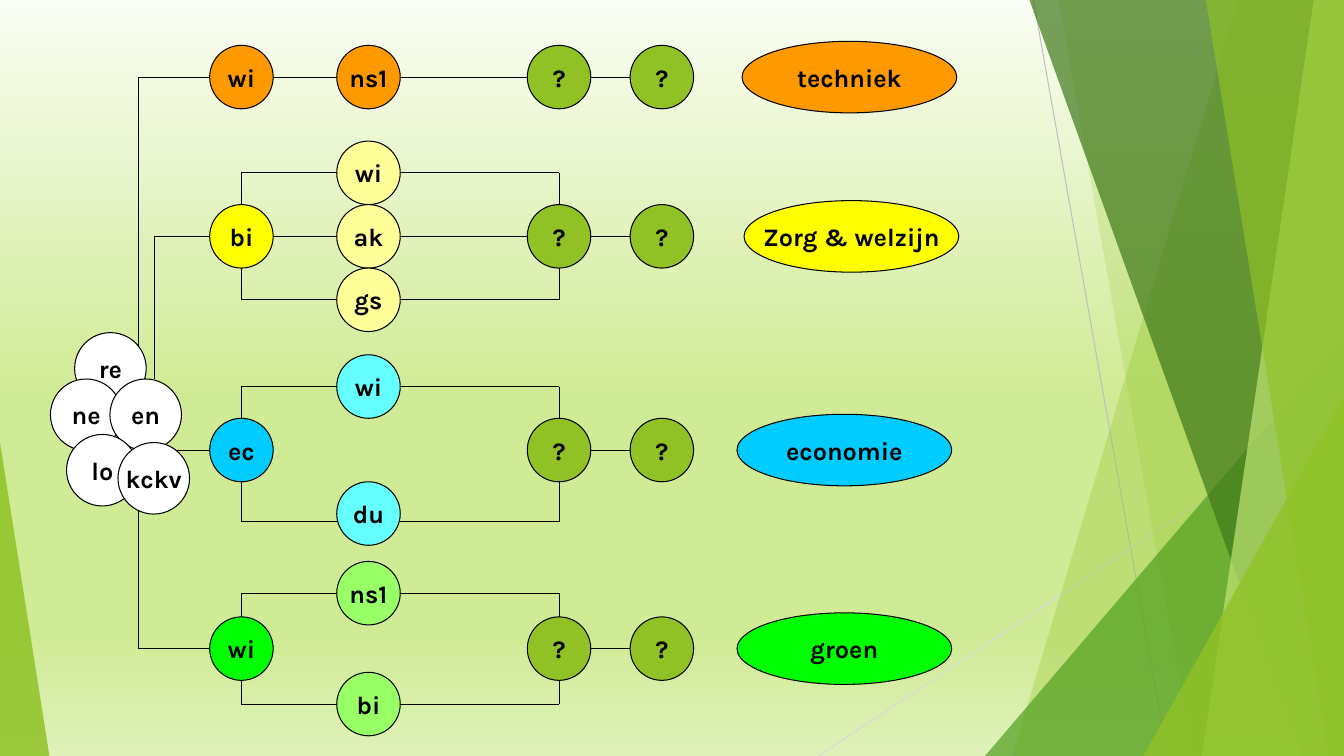
"""Build a slide that maps school subjects to four career sectors."""
from dataclasses import dataclass

import lxml.etree
import pptx
import pptx.dml.color
import pptx.enum.shapes
import pptx.enum.text
import pptx.oxml.ns
import pptx.util
from pptx.util import Inches

WIDTH, HEIGHT = 13.33, 7.5
NODE, CORE, SECTOR_WIDTH = 0.63, 0.71, 2.13
START_X, MIDDLE_X, CHOICE_X, LAST_X = 2.08, 3.34, 5.23, 6.25
LEAF, BLACK, WHITE = "90C226", "000000", "FFFFFF"
BACKGROUND = [(0, "FAFDF3"), (52, "D0EB96"), (84, "D0EB96"), (100, "DFF1B9")]
ELLIPSE = pptx.enum.shapes.MSO_SHAPE.OVAL
TRIANGLE = pptx.enum.shapes.MSO_SHAPE.ISOSCELES_TRIANGLE


@dataclass
class Shard:
    """A band from a slanted left edge to the right side of the slide."""
    top_x: float
    bottom_x: float
    colour: str
    opacity: int


@dataclass
class Wedge:
    """A right-angled triangle standing on the bottom of the slide."""
    left: float
    top: float
    width: float
    apex: float
    colour: str
    opacity: int


@dataclass
class Middle:
    """A subject in the middle column, its line shifted down by drop."""
    label: str
    top: float
    drop: float = 0


@dataclass
class Track:
    """A route from the shared core to one sector."""
    top: float
    start: str
    colour: str
    middles: list[Middle]
    middle_colour: str
    sector: str
    sector_x: float
    trunk_x: float
    trunk_y: float


SCENERY = [
    Shard(12.28, 10.04, LEAF, 30),
    Shard(10.5, 11.83, LEAF, 20),
    Wedge(9.77, 3.33, 3.56, 1, "54A021", 72),
    Shard(10.21, 12.91, "3F7819", 70),
    Shard(13.03, 11.92, "C0E474", 70),
    Shard(11.96, 13.18, LEAF, 65),
    Wedge(11.34, 3.93, 1.99, 1, LEAF, 80),
    Wedge(0, 4.39, 0.49, 0, LEAF, 85),
]
TRACKS = [
    Track(0.45, "wi", "FF9900", [Middle("ns1", 0.45)], "FF9900",
          "techniek", 7.36, 1.37, 3.76),
    Track(2.03, "bi", "FFFF00",
          [Middle("wi", 1.4), Middle("ak", 2.03), Middle("gs", 2.66)], "FFFF99",
          "Zorg & welzijn", 7.38, 1.53, 3.76),
    Track(4.15, "ec", "00CCFF", [Middle("wi", 3.52), Middle("du", 4.78, 0.08)],
          "66FFFF", "economie", 7.31, 1.53, 4.47),
    Track(6.12, "wi", "00FF00", [Middle("ns1", 5.57), Middle("bi", 6.67)],
          "99FF66", "groen", 7.31, 1.37, 4.47),
]
CORE_SUBJECTS = [("re", 0.74, 3.3), ("ne", 0.5, 3.76), ("en", 1.09, 3.76),
                 ("lo", 0.66, 4.31), ("kckv", 1.17, 4.39)]


def rgb(colour: str) -> pptx.dml.color.RGBColor:
    """Turn a hex string into a colour."""
    return pptx.dml.color.RGBColor.from_string(colour)


def paint_background(page) -> None:
    """Fill the page with a vertical gradient."""
    fill = page.background.fill
    fill.gradient()
    fill.gradient_angle = 270
    tag = pptx.oxml.ns.qn
    stops = next(page.element.iter(tag("a:gsLst")))
    for stop in list(stops):
        stops.remove(stop)
    for position, colour in BACKGROUND:
        stop = lxml.etree.SubElement(stops, tag("a:gs"), pos=str(position * 1000))
        lxml.etree.SubElement(stop, tag("a:srgbClr"), val=colour)


def draw_line(page, x1: float, y1: float, x2: float, y2: float,
              colour: str = BLACK) -> None:
    """Draw a thin straight line without a shadow."""
    line = page.shapes.add_connector(
        pptx.enum.shapes.MSO_CONNECTOR.STRAIGHT,
        Inches(x1), Inches(y1), Inches(x2), Inches(y2))
    line.line.color.rgb = rgb(colour)
    line.line.width = pptx.util.Pt(0.75)
    properties = line.element.find(pptx.oxml.ns.qn("p:spPr"))
    lxml.etree.SubElement(properties, pptx.oxml.ns.qn("a:effectLst"))


def draw_scenery(page, piece: Shard | Wedge) -> None:
    """Draw one translucent piece of the decoration."""
    if isinstance(piece, Shard):
        corners = [(WIDTH, 0), (WIDTH, HEIGHT), (piece.bottom_x, HEIGHT)]
        builder = page.shapes.build_freeform(Inches(piece.top_x), 0)
        builder.add_line_segments([(Inches(x), Inches(y)) for x, y in corners])
        shape = builder.convert_to_shape()
    else:
        shape = page.shapes.add_shape(
            TRIANGLE, Inches(piece.left), Inches(piece.top),
            Inches(piece.width), Inches(HEIGHT - piece.top))
        shape.adjustments[0] = piece.apex
    shape.shadow.inherit = False
    shape.line.fill.background()
    shape.fill.solid()
    shape.fill.fore_color.rgb = rgb(piece.colour)
    colour = next(shape.element.iter(pptx.oxml.ns.qn("a:srgbClr")))
    lxml.etree.SubElement(colour, pptx.oxml.ns.qn("a:alpha"),
                          val=str(piece.opacity * 1000))


def draw_ellipse(page, label: str, left: float, top: float, colour: str,
                 width: float = NODE, height: float = NODE) -> None:
    """Draw an outlined ellipse with a bold centred label."""
    shape = page.shapes.add_shape(
        ELLIPSE, Inches(left), Inches(top), Inches(width), Inches(height))
    shape.shadow.inherit = False
    shape.fill.solid()
    shape.fill.fore_color.rgb = rgb(colour)
    shape.line.color.rgb = rgb(BLACK)
    shape.line.width = pptx.util.Pt(0.75)
    frame = shape.text_frame
    frame.word_wrap = False
    frame.vertical_anchor = pptx.enum.text.MSO_ANCHOR.MIDDLE
    para = frame.paragraphs[0]
    para.text = label
    para.alignment = pptx.enum.text.PP_ALIGN.CENTER
    para.font.name = "Karla"
    para.font.size = pptx.util.Pt(18)
    para.font.bold = True
    para.font.color.rgb = rgb(BLACK)


def draw_track(page, track: Track) -> None:
    """Draw the lines, subjects and sector of one track."""
    half = NODE / 2
    centre = track.top + half
    if track.trunk_y < track.top or track.trunk_y > track.top + NODE:
        draw_line(page, track.trunk_x, track.trunk_y, track.trunk_x, centre)
    draw_line(page, track.trunk_x, centre, START_X, centre)
    draw_line(page, CHOICE_X + NODE, centre, LAST_X, centre)
    for middle in track.middles:
        level = middle.top + half + middle.drop
        inset = NODE if middle.top == track.top else half
        draw_line(page, START_X + inset, level, MIDDLE_X, level)
        draw_line(page, MIDDLE_X + NODE, level, CHOICE_X + NODE - inset, level)
        if middle.top != track.top:
            edge = track.top if middle.top < track.top else track.top + NODE
            for x in (START_X + half, CHOICE_X + half):
                draw_line(page, x, edge, x, level)
        draw_ellipse(page, middle.label, MIDDLE_X, middle.top, track.middle_colour)
    draw_ellipse(page, track.start, START_X, track.top, track.colour)
    for x in (CHOICE_X, LAST_X):
        draw_ellipse(page, "?", x, track.top, LEAF)
    draw_ellipse(page, track.sector, track.sector_x, track.top - 0.04,
                 track.colour, SECTOR_WIDTH, CORE)


def main() -> None:
    """Build and save the deck."""
    deck = pptx.Presentation()
    deck.slide_width, deck.slide_height = Inches(WIDTH), Inches(HEIGHT)
    page = deck.slides.add_slide(deck.slide_layouts[6])
    paint_background(page)
    draw_line(page, 10.25, 0, 11.58, HEIGHT, "BFBFBF")
    draw_line(page, WIDTH, 4.03, 8.12, HEIGHT, "D9D9D9")
    for piece in SCENERY:
        draw_scenery(page, piece)
    for track in TRACKS:
        draw_track(page, track)
    for label, left, top in CORE_SUBJECTS:
        draw_ellipse(page, label, left, top, WHITE, CORE, CORE)
    deck.save("out.pptx")


if __name__ == "__main__":
    main()
